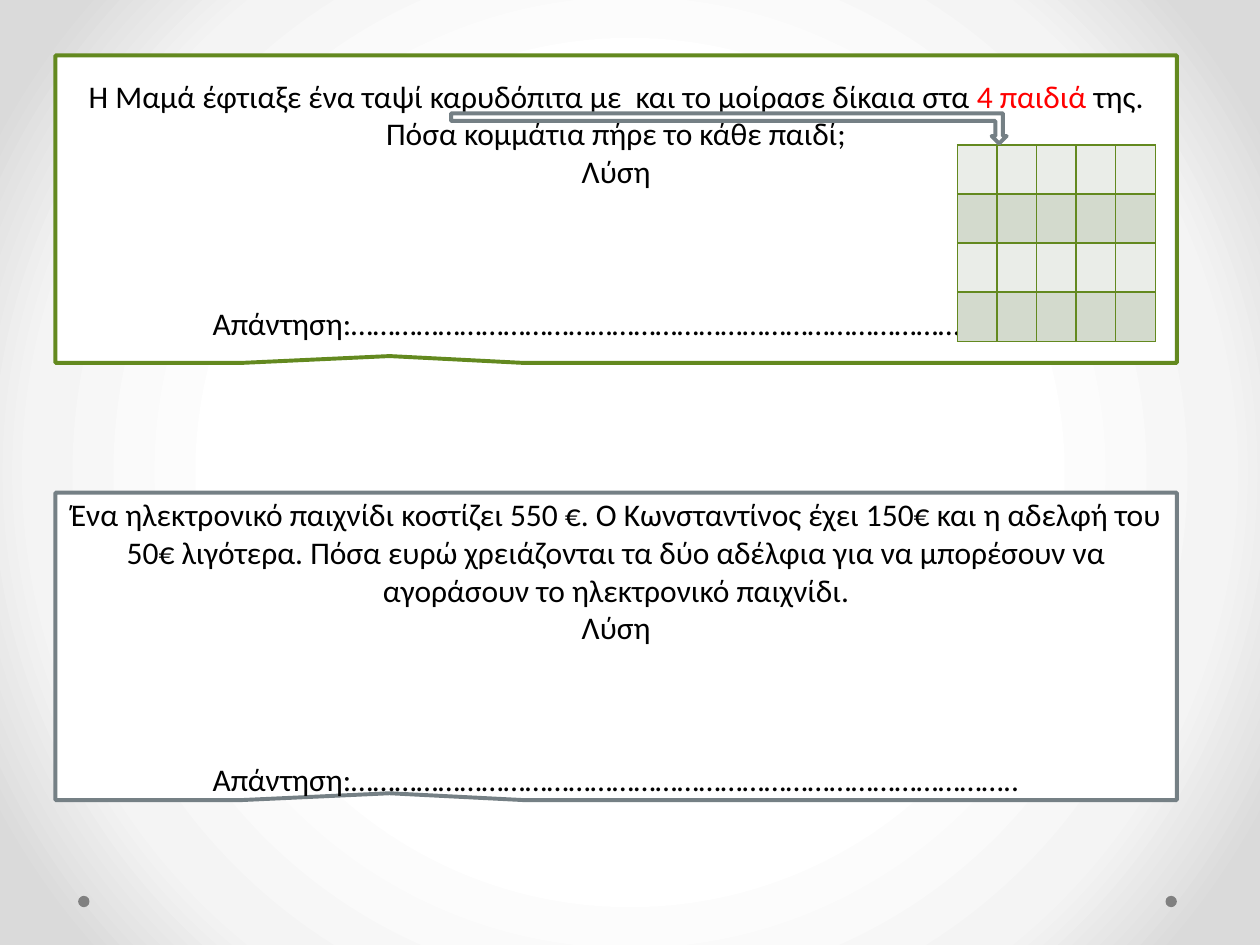
from lxml.etree import SubElement
from pptx import Presentation
from pptx.dml.color import RGBColor
from pptx.enum.shapes import MSO_SHAPE
from pptx.enum.text import MSO_ANCHOR, PP_ALIGN
from pptx.oxml import parse_xml
from pptx.oxml.ns import nsdecls, qn
from pptx.util import Inches, Pt

GREEN, GRAY, WHITE = "63891F", "758085", "FFFFFF"
BANDS = ("EAEDE8", "D3DACD")
ANSWER = "Απάντηση:" + "…" * 30 + ".."


def color(text):
    return RGBColor.from_string(text)


class Page:
    font, size = "Calibri", Pt(18)

    def __init__(self, deck):
        self.slide = deck.slides.add_slide(deck.slide_layouts[6])

    def glow(self, stops):
        """Radial gradient background, centred on the slide."""
        fill = self.slide.background.fill
        fill.gradient()
        grad = self.slide.background._cSld.find(".//" + qn("a:gradFill"))
        marks = "".join(f'<a:gs pos="{pos * 1000}"><a:srgbClr val="{tint}"/></a:gs>'
                        for pos, tint in stops)
        grad.getparent().replace(grad, parse_xml(
            f'<a:gradFill {nsdecls("a")} rotWithShape="1"><a:gsLst>{marks}</a:gsLst>'
            '<a:path path="circle"><a:fillToRect l="50000" t="50000" r="50000" b="50000"/>'
            '</a:path></a:gradFill>'))

    def shape(self, kind, box, fill, line=None):
        item = self.slide.shapes.add_shape(kind, *map(Inches, box))
        item.shadow.inherit = False
        item.fill.solid()
        item.fill.fore_color.rgb = color(fill)
        if line:
            item.line.color.rgb = color(line)
            item.line.width = Pt(2.25)
        else:
            item.line.fill.background()
        return item

    def task(self, top, line, runs):
        """Callout with a problem, room to solve it and an answer line."""
        item = self.shape(MSO_SHAPE.RECTANGULAR_CALLOUT, (0.44, top, 8.9, 2.44), WHITE, line)
        item.adjustments[0], item.adjustments[1] = -0.202, 0.478
        frame = item.text_frame
        frame.word_wrap = True
        frame.vertical_anchor = MSO_ANCHOR.MIDDLE
        parts = [runs, [("Λύση", None)], [(ANSWER, None)]]
        for num, part in enumerate(parts):
            para = frame.add_paragraph() if num else frame.paragraphs[0]
            para.alignment = PP_ALIGN.CENTER
            para.font.name, para.font.size = self.font, self.size
            para.font.color.rgb = color("000000")
            for text, tint in part:
                run = para.add_run()
                run.text = text
                run.font.name, run.font.size = self.font, self.size
                run.font.color.rgb = color(tint or "000000")
        para.space_before = Pt(65)

    def grid(self, box, rows, cols):
        """Empty banded table with thin green borders."""
        table = self.slide.shapes.add_table(rows, cols, *map(Inches, box)).table
        for row in range(rows):
            for col in range(cols):
                cell = table.cell(row, col)
                cell.margin_top = cell.margin_bottom = Inches(0.02)
                cell.text_frame.paragraphs[0].font.size = Pt(12)
                props = cell._tc.get_or_add_tcPr()
                for side in ("lnL", "lnR", "lnT", "lnB"):
                    edge = SubElement(props, qn("a:" + side), w=str(Pt(1)))
                    solid = SubElement(edge, qn("a:solidFill"))
                    SubElement(solid, qn("a:srgbClr"), val=GREEN)
                cell.fill.solid()
                cell.fill.fore_color.rgb = color(BANDS[row % 2])


def main():
    deck = Presentation()
    deck.slide_width, deck.slide_height = Inches(10), Inches(7.5)
    page = Page(deck)
    page.glow([(50, WHITE), (76, "F4F4F4"), (92, "DADADA")])

    # Footer dots
    for left in (9.25, 0.62):
        page.shape(MSO_SHAPE.OVAL, (left, 7.11, 0.09, 0.09), "808080")

    # Problems
    page.task(0.44, GREEN, [
        ("Η Μαμά έφτιαξε ένα ταψί καρυδόπιτα με  και το μοίρασε δίκαια στα ", None),
        ("4 παιδιά ", "FF0000"),
        ("της. Πόσα κομμάτια πήρε το κάθε παιδί;", None)])
    page.task(3.91, GRAY, [
        ("Ένα ηλεκτρονικό παιχνίδι κοστίζει 550 €. Ο Κωνσταντίνος έχει 150€ και η "
         "αδελφή του 50€ λιγότερα. Πόσα ευρώ χρειάζονται τα δύο αδέλφια για να "
         "μπορέσουν να αγοράσουν το ηλεκτρονικό παιχνίδι.", None)])

    # Baking tray and the arrow to it
    page.grid((7.6, 1.15, 1.57, 1.56), 4, 5)
    arrow = page.shape(MSO_SHAPE.BENT_UP_ARROW, (3.58, 0.9, 4.41, 0.24), WHITE, GRAY)
    arrow._element.spPr.find(qn("a:xfrm")).set("flipV", "1")

    deck.save("out.pptx")


if __name__ == "__main__":
    main()
